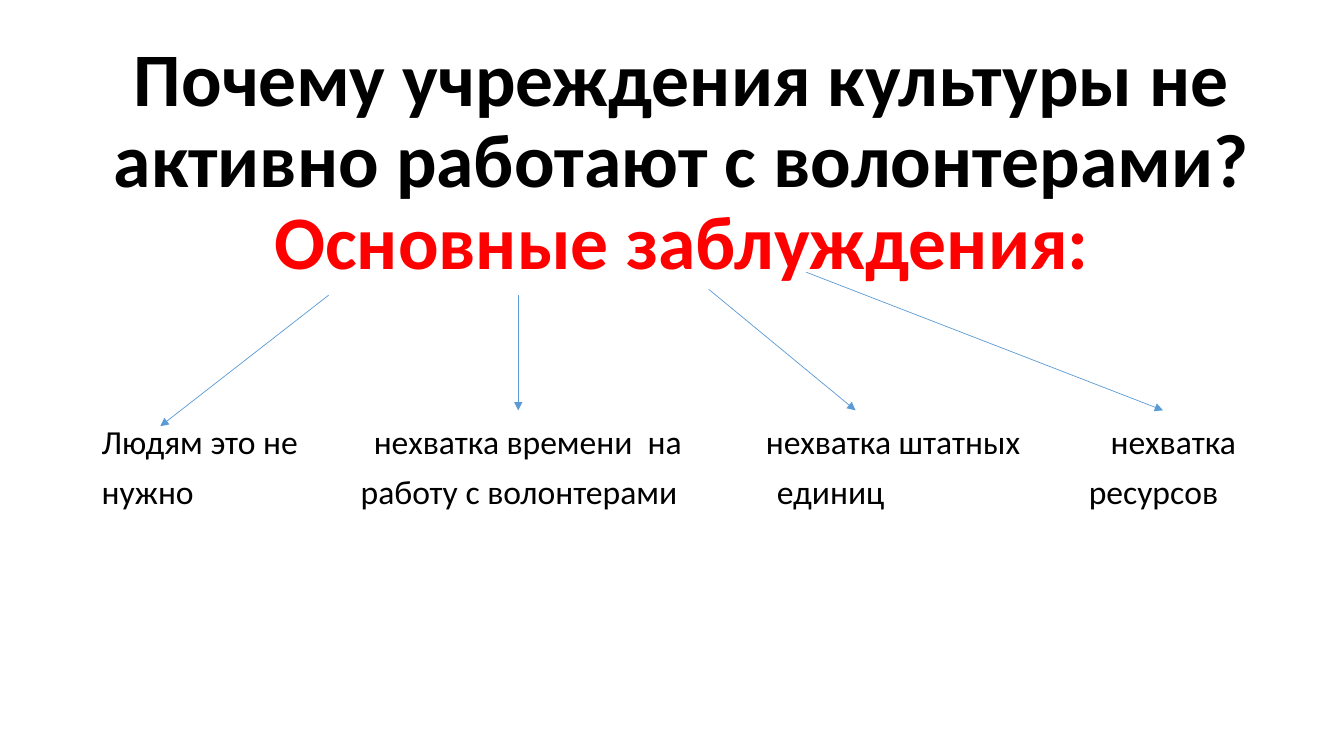
from lxml import etree
from pptx import Presentation
from pptx.dml.color import RGBColor
from pptx.enum.shapes import MSO_CONNECTOR
from pptx.enum.text import MSO_ANCHOR, MSO_AUTO_SIZE, PP_ALIGN
from pptx.oxml.ns import qn
from pptx.util import Cm, Pt

STRAIGHT = MSO_CONNECTOR.STRAIGHT
TOP, BOTTOM = MSO_ANCHOR.TOP, MSO_ANCHOR.BOTTOM
NO_FIT = MSO_AUTO_SIZE.NONE
CENTER, LEFT = PP_ALIGN.CENTER, PP_ALIGN.LEFT

COLORS = {"text": "000000", "accent": "FF0000", "arrow": "5B9BD5"}
FONT = "Calibri"

QUESTION = "Почему учреждения культуры не активно работают с волонтерами?"
HEADING = "Основные заблуждения:"
# Left edge and width in cm, then the lines, each with its indent in cm
REASONS = [
    (2.31, 6, [("Людям это не", 0), ("нужно", 0)]),
    (8.84, 9.2, [("нехватка времени  на", 0.33), ("работу с волонтерами", 0)]),
    (19.05, 7.5, [("нехватка штатных", 0), ("единиц", 0.28)]),
    (27.19, 5, [("нехватка", 0.55), ("ресурсов", 0)]),
]
REASONS_TOP, REASONS_HEIGHT = 10.59, 6.32
# Start and end points in cm
ARROWS = [
    ((8.28, 7.44), (4.04, 10.74)),
    ((13.06, 7.44), (13.06, 10.34)),
    ((17.86, 7.29), (21.56, 10.34)),
    ((20.32, 6.86), (29.31, 10.34)),
]


def add_text(p, text, size=24, color="text", bold=False):
    r = p.add_run()
    r.text = text
    r.font.name = FONT
    r.font.size = Pt(size)
    r.font.bold = bold
    r.font.color.rgb = RGBColor.from_string(COLORS[color])


def place(sp, left, top, width, height, anchor):
    sp.left, sp.top, sp.width, sp.height = map(Cm, (left, top, width, height))
    tf = sp.text_frame
    tf.word_wrap = True
    tf.auto_size = NO_FIT
    tf.vertical_anchor = anchor
    return tf


def fill_reason(tf, lines):
    for i, (text, indent) in enumerate(lines):
        p = tf.add_paragraph() if i else tf.paragraphs[0]
        p.alignment = LEFT
        p.line_spacing = 0.9
        p.space_before = Pt(10)
        pPr = p._p.get_or_add_pPr()
        pPr.set("marL", str(int(Cm(indent))))
        pPr.set("indent", "0")
        etree.SubElement(pPr, qn("a:buNone"))
        add_text(p, text)


def add_arrow(s, start, end):
    line = s.shapes.add_connector(STRAIGHT, *map(Cm, start + end))
    line.line.color.rgb = RGBColor.from_string(COLORS["arrow"])
    line.line.width = Pt(0.5)
    etree.SubElement(line.line._get_or_add_ln(), qn("a:tailEnd"), type="triangle")
    etree.SubElement(line._element.spPr, qn("a:effectLst"))


def main():
    prs = Presentation()
    prs.slide_width, prs.slide_height = Cm(33.87), Cm(19.05)
    s = prs.slides.add_slide(prs.slide_layouts[1])

    tf = place(s.shapes.title, 1.24, 0.28, 31.88, 11.4, BOTTOM)
    tf.margin_bottom = Cm(4.48)
    p = tf.paragraphs[0]
    p.alignment = CENTER
    p.line_spacing = 0.9
    add_text(p, QUESTION, size=54, bold=True)
    p.add_line_break()
    add_text(p, HEADING, size=54, color="accent", bold=True)

    for i, (left, width, lines) in enumerate(REASONS):
        sp = s.shapes.add_textbox(0, 0, 0, 0) if i else s.placeholders[1]
        tf = place(sp, left, REASONS_TOP, width, REASONS_HEIGHT, TOP)
        fill_reason(tf, lines)

    for start, end in ARROWS:
        add_arrow(s, start, end)

    prs.save("out.pptx")


if __name__ == "__main__":
    main()
